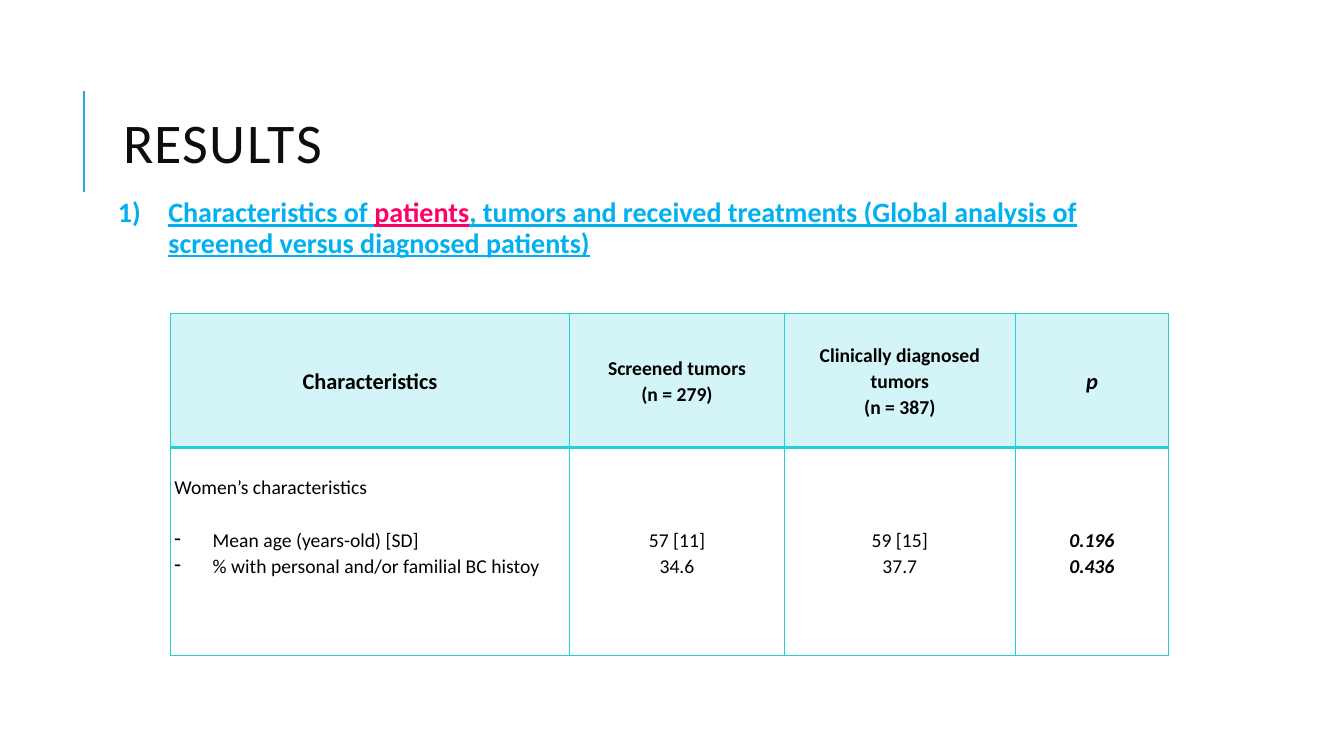
"""Build the results slide comparing screened and clinically diagnosed tumors."""
from dataclasses import dataclass

from lxml import etree
from pptx import Presentation
from pptx.dml.color import RGBColor
from pptx.enum.shapes import MSO_CONNECTOR
from pptx.enum.text import MSO_ANCHOR, MSO_AUTO_SIZE, PP_ALIGN
from pptx.oxml.ns import qn
from pptx.util import Inches, Pt

LEFT, CENTER = PP_ALIGN.LEFT, PP_ALIGN.CENTER
TOP, MIDDLE = MSO_ANCHOR.TOP, MSO_ANCHOR.MIDDLE
NO_AUTOFIT = MSO_AUTO_SIZE.NONE
STRAIGHT = MSO_CONNECTOR.STRAIGHT


@dataclass(frozen=True)
class Theme:
    font: str = "Calibri"
    title_color: str = "0D0D0D"
    accent: str = "1CADE4"
    heading: str = "00B0F0"
    highlight: str = "FF0066"
    text: str = "000000"
    border: str = "27CED7"
    header_fill: str = "D4F5F7"
    body_fill: str = "FFFFFF"
    title_size: int = 40
    heading_size: int = 20
    label_size: int = 16
    table_size: int = 14
    thin: int = 1
    thick: int = 2


@dataclass(frozen=True)
class Line:
    text: str
    size: int
    bold: bool = False
    italic: bool = False
    bullet: bool = False
    space_before: float = 0


@dataclass(frozen=True)
class Cell:
    lines: tuple[Line, ...]
    alignment: PP_ALIGN = CENTER
    margin_top: float = 0


THEME = Theme()
LINE_GAP = 18.8
LINE_INCHES = 0.26
COLUMN_WIDTHS = (3.96, 2.13, 2.29, 1.52)
ROW_HEIGHTS = (1.33, 2.06)


def header_cell(*texts: str, size: int = THEME.table_size, italic: bool = False) -> Cell:
    """Describe a bold column heading."""
    return Cell(tuple(Line(text, size, bold=True, italic=italic) for text in texts))


def value_cell(*texts: str, strong: bool = False) -> Cell:
    """Describe values level with the bulleted characteristics."""
    lines = tuple(Line(text, THEME.table_size, strong, strong) for text in texts)
    return Cell(lines, margin_top=3 * LINE_INCHES)


ROWS = (
    (
        header_cell("Characteristics", size=THEME.label_size),
        header_cell("Screened tumors", "(n = 279)"),
        header_cell("Clinically diagnosed tumors", "(n = 387)"),
        header_cell("p", size=THEME.label_size, italic=True),
    ),
    (
        Cell(
            (
                Line("Women’s characteristics", THEME.table_size),
                Line("Mean age (years-old) [SD]", THEME.table_size, bullet=True,
                     space_before=LINE_GAP),
                Line("% with personal and/or familial BC histoy", THEME.table_size, bullet=True),
            ),
            LEFT,
            LINE_INCHES,
        ),
        value_cell("57 [11]", "34.6"),
        value_cell("59 [15]", "37.7"),
        value_cell("0.196", "0.436", strong=True),
    ),
)
HEADING = (
    ("Characteristics of ", THEME.heading),
    ("patients", THEME.highlight),
    (", tumors and received treatments (Global analysis of screened versus diagnosed patients)",
     THEME.heading),
)


def style_font(font, size: int, color: str, bold: bool = False, italic: bool = False) -> None:
    """Apply the theme typeface and the given look."""
    font.name, font.size = THEME.font, Pt(size)
    font.bold, font.italic = bold, italic
    font.color.rgb = RGBColor.from_string(color)


def add_bullet(paragraph, indent: float, tag: str, **attributes: str) -> None:
    """Give a paragraph a hanging indent and a bullet."""
    properties = paragraph._p.get_or_add_pPr()
    properties.set("marL", str(Inches(indent)))
    properties.set("indent", str(-Inches(indent)))
    bullet = etree.Element(qn(tag), attributes)
    defaults = properties.find(qn("a:defRPr"))
    if defaults is None:
        properties.append(bullet)
    else:
        defaults.addprevious(bullet)


def place(shape, left: float, top: float, width: float, height: float) -> None:
    """Move and size a shape in inches."""
    shape.left, shape.top = Inches(left), Inches(top)
    shape.width, shape.height = Inches(width), Inches(height)


def add_title(slide) -> None:
    """Fill the title and draw its accent line."""
    title = slide.shapes.title
    place(title, 1.12, 0.64, 10.63, 1.64)
    frame = title.text_frame
    frame.text = "RESULTS"
    frame.auto_size, frame.vertical_anchor = NO_AUTOFIT, MIDDLE
    paragraph = frame.paragraphs[0]
    paragraph.alignment, paragraph.line_spacing = LEFT, 0.8
    style_font(paragraph.font, THEME.title_size, THEME.title_color)
    paragraph.runs[0]._r.get_or_add_rPr().set("spc", "100")
    accent = slide.shapes.add_connector(
        STRAIGHT, Inches(0.83), Inches(1.9), Inches(0.83), Inches(0.9))
    accent.line.color.rgb = RGBColor.from_string(THEME.accent)
    accent.line.width = Pt(1.5)
    etree.SubElement(accent._element.spPr, qn("a:effectLst"))


def add_heading(slide) -> None:
    """Fill the body placeholder with the numbered heading."""
    body = slide.placeholders[1]
    place(body, 1.12, 1.92, 10.63, 1.02)
    frame = body.text_frame
    frame.auto_size, frame.vertical_anchor = NO_AUTOFIT, TOP
    frame.margin_left = frame.margin_right = Inches(0.05)
    frame.margin_top = frame.margin_bottom = Inches(0.05)
    paragraph = frame.paragraphs[0]
    paragraph.line_spacing, paragraph.space_before = 0.9, Pt(10)
    style_font(paragraph.font, THEME.heading_size, THEME.heading, bold=True)
    paragraph.font.underline = True
    for text, color in HEADING:
        run = paragraph.add_run()
        run.text = text
        run.font.color.rgb = RGBColor.from_string(color)
    add_bullet(paragraph, 0.5, "a:buAutoNum", type="arabicParenR")


def set_borders(cell, widths: dict[str, int]) -> None:
    """Draw the cell borders, keyed by side."""
    properties = cell._tc.get_or_add_tcPr()
    for position, (side, width) in enumerate(widths.items()):
        line = etree.Element(qn(f"a:ln{side}"), w=str(Pt(width)))
        fill = etree.SubElement(line, qn("a:solidFill"))
        etree.SubElement(fill, qn("a:srgbClr"), val=THEME.border)
        properties.insert(position, line)


def fill_cell(cell, content: Cell, is_header: bool) -> None:
    """Write and format one table cell."""
    cell.margin_left = cell.margin_right = Inches(0.04)
    cell.margin_top, cell.margin_bottom = Inches(content.margin_top), 0
    cell.vertical_anchor = MIDDLE if is_header else TOP
    cell.fill.solid()
    cell.fill.fore_color.rgb = RGBColor.from_string(
        THEME.header_fill if is_header else THEME.body_fill)
    top, bottom = (THEME.thin, THEME.thick) if is_header else (THEME.thick, THEME.thin)
    set_borders(cell, {"L": THEME.thin, "R": THEME.thin, "T": top, "B": bottom})
    cell.text_frame.text = "\n".join(line.text for line in content.lines)
    for paragraph, line in zip(cell.text_frame.paragraphs, content.lines):
        paragraph.alignment, paragraph.line_spacing = content.alignment, 1.1
        paragraph.space_before = Pt(line.space_before)
        style_font(paragraph.font, line.size, THEME.text, line.bold, line.italic)
        if line.bullet:
            add_bullet(paragraph, 0.38, "a:buChar", char="-")


def add_results_table(slide) -> None:
    """Add the table of characteristics."""
    table = slide.shapes.add_table(
        len(ROWS), len(COLUMN_WIDTHS), Inches(1.69), Inches(3.11),
        Inches(sum(COLUMN_WIDTHS)), Inches(sum(ROW_HEIGHTS))).table
    table.first_row = table.horz_banding = False
    for column, width in zip(table.columns, COLUMN_WIDTHS):
        column.width = Inches(width)
    for row_index, (row, height) in enumerate(zip(table.rows, ROW_HEIGHTS)):
        row.height = Inches(height)
        for cell, content in zip(row.cells, ROWS[row_index]):
            fill_cell(cell, content, row_index == 0)


def main() -> None:
    """Create and save the presentation."""
    presentation = Presentation()
    presentation.slide_width, presentation.slide_height = Inches(13.33), Inches(7.5)
    slide = presentation.slides.add_slide(presentation.slide_layouts[1])
    add_title(slide)
    add_heading(slide)
    add_results_table(slide)
    presentation.save("out.pptx")


if __name__ == "__main__":
    main()
